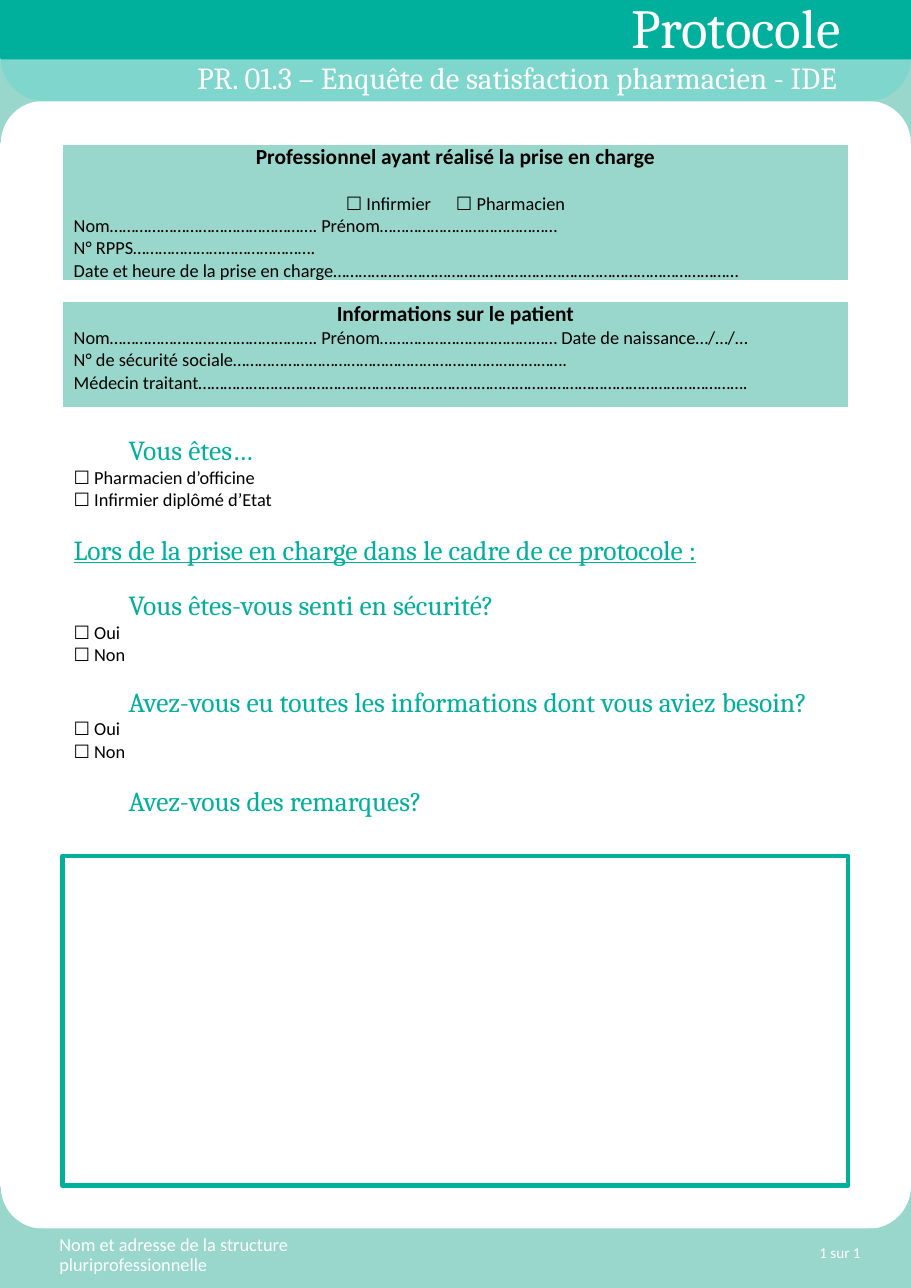
from dataclasses import dataclass, replace

from lxml import etree
from pptx import Presentation
from pptx.dml.color import RGBColor
from pptx.enum.shapes import MSO_SHAPE as Shape
from pptx.enum.text import MSO_ANCHOR as Anchor, PP_ALIGN as Align
from pptx.oxml.ns import qn
from pptx.util import Pt

PAGE_W, PAGE_H = 595.4, 841.7
MARGIN, CONTENT_W = 41, 513.4
TEAL, MINT, WHITE, BLACK = "00AF9C", "99D7CD", "FFFFFF", "000000"
GAP = 14.6


@dataclass(frozen=True)
class Style:
    font: str
    size: float
    color: str
    bold: bool = False
    underline: bool = False
    align: Align = Align.LEFT
    indent: float = 0
    spacing: float = 1


FIELD = Style("Calibri", 12, BLACK)
CENTERED = replace(FIELD, align=Align.CENTER)
CARD_TITLE = replace(CENTERED, size=14, bold=True)
SECTION = Style("Cambria", 18, TEAL, underline=True)
QUESTION = replace(SECTION, underline=False, indent=36)
BANNER = Style("Cambria", 36, WHITE)
SUBTITLE = replace(BANNER, size=20, align=Align.RIGHT, spacing=0.9)
FOOTER = Style("Calibri", 12, WHITE, spacing=0.9)
PAGE_NUMBER = Style("Calibri", 9.9, WHITE, align=Align.RIGHT)


def rgb(value):
    return RGBColor.from_string(value)


def write(frame, lines):
    """Each line is (text, style) or (text, style, space before)."""
    for i, (text, style, *gap) in enumerate(lines):
        paragraph = frame.add_paragraph() if i else frame.paragraphs[0]
        paragraph.text = text
        paragraph.alignment = style.align
        paragraph.line_spacing = style.spacing
        if gap:
            paragraph.space_before = Pt(gap[0])
        if style.indent:
            properties = paragraph._p.get_or_add_pPr()
            properties.set("marL", str(Pt(style.indent)))
            properties.set("indent", "0")
        font = paragraph.font
        font.name, font.size = style.font, Pt(style.size)
        font.bold, font.underline = style.bold, style.underline
        font.color.rgb = rgb(style.color)


def add_text(slide, left, top, width, height, lines, anchor=Anchor.TOP):
    box = slide.shapes.add_textbox(Pt(left), Pt(top), Pt(width), Pt(height))
    box.text_frame.word_wrap = True
    box.text_frame.vertical_anchor = anchor
    write(box.text_frame, lines)


def add_block(slide, kind, left, top, width, height, fill=None, alpha=None):
    block = slide.shapes.add_shape(kind, Pt(left), Pt(top), Pt(width), Pt(height))
    block.shadow.inherit = False
    block.line.fill.background()
    if fill:
        block.fill.solid()
        block.fill.fore_color.rgb = rgb(fill)
    else:
        block.fill.background()
    if alpha:
        color = block.fill._xPr.find(".//" + qn("a:srgbClr"))
        etree.SubElement(color, qn("a:alpha")).set("val", str(alpha * 1000))
    return block


def add_corner(slide, left, top):
    corner = add_block(slide, Shape.PLAQUE, left, top, 59.8, 55.4, MINT)
    corner.adjustments[0] = 0.5


def add_card(slide, top, height, lines):
    table = slide.shapes.add_table(1, 1, Pt(MARGIN), Pt(top),
                                   Pt(CONTENT_W), Pt(height)).table
    table.first_row = table.horz_banding = False
    cell = table.cell(0, 0)
    cell.margin_left = cell.margin_right = Pt(7.2)
    cell.margin_top = cell.margin_bottom = 0
    # Borders come before the fill in the cell properties
    properties = cell._tc.get_or_add_tcPr()
    for side in "LRTB":
        border = etree.SubElement(properties, qn(f"a:ln{side}"), w=str(Pt(1)))
        fill = etree.SubElement(border, qn("a:solidFill"))
        etree.SubElement(fill, qn("a:srgbClr"), val=WHITE)
    cell.fill.solid()
    cell.fill.fore_color.rgb = rgb(MINT)
    write(cell.text_frame, lines)


def add_page_frame(slide):
    add_block(slide, Shape.RECTANGLE, 0, 35.3, PAGE_W, 31, TEAL, alpha=50)
    add_block(slide, Shape.RECTANGLE, 0, 0, PAGE_W, 38.9, TEAL)
    add_block(slide, Shape.RECTANGLE, 0, 802.8, PAGE_W, 38.9, MINT)
    for top in (38.2, 775.4):
        for left in (-31.7, 567.7):
            add_corner(slide, left, top)


def main():
    prs = Presentation()
    prs.slide_width, prs.slide_height = Pt(PAGE_W), Pt(PAGE_H)
    slide = prs.slides.add_slide(prs.slide_layouts[6])

    # Header and footer
    add_page_frame(slide)
    add_text(slide, 405.4, -7.9, 190, 51.1, [("Protocole", BANNER)])
    add_text(slide, 85.7, 37.4, 468.7, 28.8,
             [("PR. 01.3 – Enquête de satisfaction pharmacien - IDE", SUBTITLE)],
             Anchor.MIDDLE)
    add_text(slide, 439.2, 807.1, 130.3, 22.3, [("1 sur 1", PAGE_NUMBER)],
             Anchor.MIDDLE)
    add_text(slide, 31.7, 804.2, 194.4, 34.6,
             [("Nom et adresse de la structure pluriprofessionnelle", FOOTER)])

    # Identification cards
    add_card(slide, 94.3, 88.6, [
        ("Professionnel ayant réalisé la prise en charge", CARD_TITLE),
        ("☐ Infirmier\t☐ Pharmacien", CENTERED, GAP),
        ("Nom…………………………………………. Prénom……………………………………", FIELD),
        ("N° RPPS…………………………………….", FIELD),
        ("Date et heure de la prise en charge"
         "……………………………………………………………………………………", FIELD),
    ])
    add_card(slide, 196.6, 69.8, [
        ("Informations sur le patient", CARD_TITLE),
        ("Nom…………………………………………. Prénom…………………………………… "
         "Date de naissance…/…/…", FIELD),
        ("N° de sécurité sociale…………………………………………………………………….", FIELD),
        ("Médecin traitant"
         "………………………………………………………………………………………………………………….", FIELD),
    ])

    # Questions
    yes_no = [("☐ Oui", FIELD), ("☐ Non", FIELD)]
    add_text(slide, MARGIN, 279.4, CONTENT_W, 295.9, [
        ("Vous êtes…", QUESTION),
        ("☐ Pharmacien d’officine", FIELD),
        ("☐ Infirmier diplômé d’Etat", FIELD),
        ("Lors de la prise en charge dans le cadre de ce protocole :", SECTION, GAP),
        ("Vous êtes-vous senti en sécurité?", QUESTION, GAP),
        *yes_no,
        ("Avez-vous eu toutes les informations dont vous aviez besoin?",
         QUESTION, 12.8),
        *yes_no,
        ("Avez-vous des remarques?", QUESTION, GAP),
    ])

    # Space for remarks
    remarks = add_block(slide, Shape.RECTANGLE, MARGIN, 559.4, CONTENT_W, 215.3)
    remarks.line.color.rgb = rgb(TEAL)
    remarks.line.width = Pt(3)

    prs.save("out.pptx")


if __name__ == "__main__":
    main()
